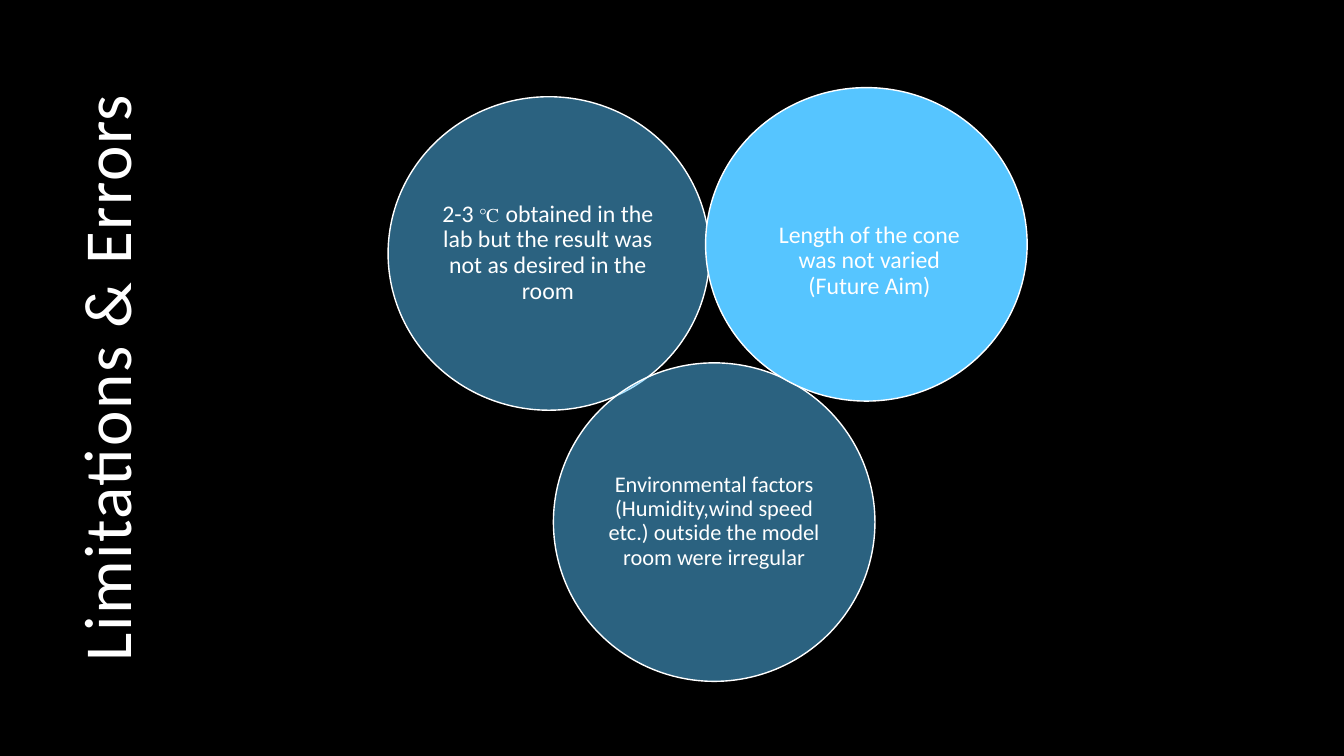
from dataclasses import dataclass

from lxml.etree import SubElement
from pptx import Presentation
from pptx.dml.color import RGBColor
from pptx.enum.shapes import MSO_SHAPE as Shape
from pptx.enum.text import MSO_ANCHOR as Anchor, PP_ALIGN as Align
from pptx.oxml.ns import qn
from pptx.util import Pt


@dataclass(frozen=True)
class Theme:
    """Colours, fonts and type sizes of the slide."""
    background: RGBColor = RGBColor(0x00, 0x00, 0x00)
    ink: RGBColor = RGBColor(0xFF, 0xFF, 0xFF)
    circle: RGBColor = RGBColor(0x56, 0xC5, 0xFF)
    font: str = "Calibri"
    symbol_font: str = "Times New Roman"
    title: int = 48
    body: int = 17
    small: int = 16
    symbol: int = 14


THEME = Theme()
CIRCLE_WIDTH = 229.7
LABEL_WIDTH = 162

CIRCLES = [
    dict(box=(277.2, 69.1, CIRCLE_WIDTH, 223.9), opacity=50,
         label=(310.3, 101.5, LABEL_WIDTH, 158.4), inset=5,
         runs=[("2-3 ", THEME.body, THEME.font),
               ("℃", THEME.symbol, THEME.symbol_font),
               (" obtained in the lab but the result was not as desired in the room",
                THEME.body, THEME.font)]),
    dict(box=(395.3, 259.2, CIRCLE_WIDTH, 227.5), opacity=50,
         label=(429.1, 292.3, LABEL_WIDTH, 160.6), inset=5,
         runs=[("Environmental factors (Humidity,wind speed etc.) outside the model "
                "room were irregular", THEME.small, THEME.font)]),
    dict(box=(504, 62.6, CIRCLE_WIDTH, 223.9), opacity=100,
         label=(540, 107.3, LABEL_WIDTH, 158.4), inset=6.5,
         runs=[("Length of the cone was not varied (Future Aim)", THEME.body, THEME.font)]),
]


def set_all(target, values):
    """Set every attribute named in a dict."""
    for name, value in values.items():
        setattr(target, name, value)


def add_circle(slide, box, opacity):
    """Draw an outlined ellipse with the given opacity in percent."""
    shape = slide.shapes.add_shape(Shape.OVAL, *map(Pt, box))
    shape.shadow.inherit = False
    shape.fill.solid()
    shape.fill.fore_color.rgb = THEME.circle
    shape.line.color.rgb = THEME.ink
    shape.line.width = Pt(1)
    if opacity < 100:
        colour = shape.fill._xPr.find(qn("a:solidFill")).find(qn("a:srgbClr"))
        SubElement(colour, qn("a:alpha")).set("val", str(opacity * 1000))


def add_label(slide, box, runs, anchor, inset_x, inset_y):
    """Write one centred paragraph of (text, size, font) runs."""
    shape = slide.shapes.add_textbox(*map(Pt, box))
    frame = shape.text_frame
    set_all(frame, dict(word_wrap=True, vertical_anchor=anchor,
                        margin_left=Pt(inset_x), margin_right=Pt(inset_x),
                        margin_top=Pt(inset_y), margin_bottom=Pt(inset_y)))
    paragraph = frame.paragraphs[0]
    set_all(paragraph, dict(alignment=Align.CENTER, line_spacing=0.9))
    for text, size, font in runs:
        run = paragraph.add_run()
        run.text = text
        run.font.color.rgb = THEME.ink
        set_all(run.font, dict(size=Pt(size), name=font))
        SubElement(run.font._element, qn("a:ea")).set("typeface", font)
    return shape


def add_side_title(slide, text):
    """Write the title turned to read upwards along the left edge."""
    shape = add_label(slide, (-216, 216, 540, 108), [(text, THEME.title, THEME.font)],
                      Anchor.BOTTOM, 7.2, 3.6)
    shape.rotation = 270
    shape.text_frame.paragraphs[0].runs[0].font._element.set("spc", "100")


def main():
    """Build and save the slide."""
    presentation = Presentation()
    set_all(presentation, dict(slide_width=Pt(960), slide_height=Pt(540)))
    slide = presentation.slides.add_slide(presentation.slide_layouts[6])
    slide.background.fill.solid()
    slide.background.fill.fore_color.rgb = THEME.background
    add_side_title(slide, "Limitations & Errors")
    for circle in CIRCLES:
        add_circle(slide, circle["box"], circle["opacity"])
        add_label(slide, circle["label"], circle["runs"], Anchor.MIDDLE,
                  circle["inset"], circle["inset"])
    presentation.save("out.pptx")


if __name__ == "__main__":
    main()
